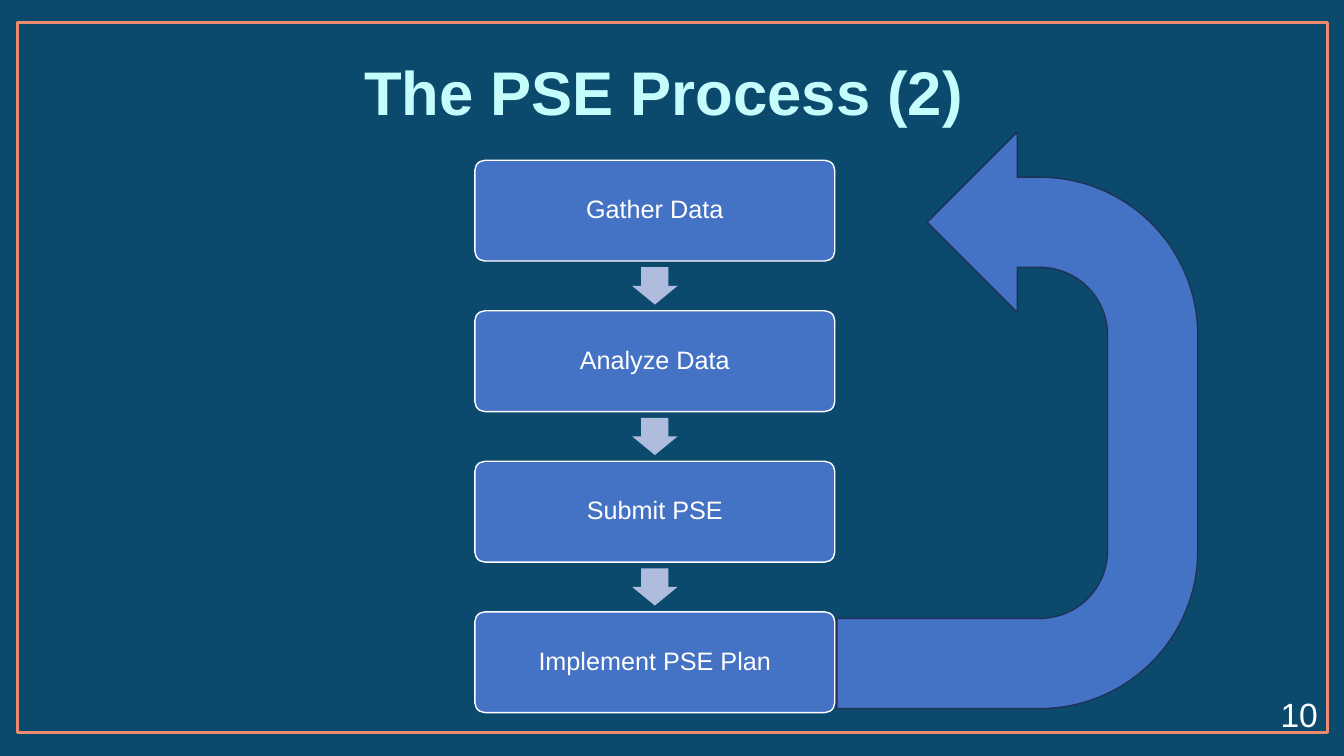
import pptx
import pptx.util
import pptx.dml.color
import pptx.enum.shapes
import pptx.enum.text

Inches, Pt = pptx.util.Inches, pptx.util.Pt
MSO_SHAPE = pptx.enum.shapes.MSO_SHAPE
PP_ALIGN = pptx.enum.text.PP_ALIGN

BLUE, WHITE = "4472C4", "FFFFFF"

prs = pptx.Presentation()
prs.slide_width, prs.slide_height = Inches(13.33), Inches(7.5)
slide = prs.slides.add_slide(prs.slide_layouts[6])


def add_shape(kind, left, top, width, height, fill=None, line=None, line_width=1):
    """Add a shadowless preset shape; no fill or line unless a colour is given."""
    shape = slide.shapes.add_shape(
        kind, Inches(left), Inches(top), Inches(width), Inches(height))
    shape.shadow.inherit = False
    for part, color in ((shape.fill, fill), (shape.line.fill, line)):
        if color:
            part.solid()
            part.fore_color.rgb = pptx.dml.color.RGBColor.from_string(color)
        else:
            part.background()
    if line:
        shape.line.width = Pt(line_width)
    return shape


def write(shape, text, size, color, align=PP_ALIGN.CENTER, bold=False):
    frame = shape.text_frame
    frame.word_wrap = True
    frame.vertical_anchor = pptx.enum.text.MSO_ANCHOR.MIDDLE
    paragraph = frame.paragraphs[0]
    paragraph.text = text
    paragraph.alignment = align
    font = paragraph.font
    font.name, font.size, font.bold = "Arial", Pt(size), bold
    font.color.rgb = pptx.dml.color.RGBColor.from_string(color)


background = slide.background.fill
background.solid()
background.fore_color.rgb = pptx.dml.color.RGBColor.from_string("0C4A6D")

add_shape(MSO_SHAPE.RECTANGLE, 0.17, 0.22, 13, 7.05, line="ED8B6F", line_width=2)

title = slide.shapes.add_textbox(Inches(0.17), Inches(0.22), Inches(12.83), Inches(1.45))
write(title, "The PSE Process (2)", 44, "C4FDFC", bold=True)
title.text_frame.paragraphs[0].line_spacing = 0.9

# Steps run down the slide with an arrow in each gap
steps = ["Gather Data", "Analyze Data", "Submit PSE", "Implement PSE Plan"]
step_left, step_top, step_width, step_height = 4.71, 1.59, 3.57, 1
step_pitch = (6.07 - step_top) / (len(steps) - 1)
arrow_width, arrow_height = 0.45, 0.37
arrow_left = step_left + (step_width - arrow_width) / 2
arrow_offset = (step_height + step_pitch - arrow_height) / 2

for index, step in enumerate(steps):
    top = step_top + index * step_pitch
    box = add_shape(MSO_SHAPE.ROUNDED_RECTANGLE, step_left, top,
                    step_width, step_height, BLUE, WHITE)
    box.adjustments[0] = 0.1
    write(box, step, 18, WHITE)
    box.text_frame.paragraphs[0].line_spacing = 0.9
    if index < len(steps) - 1:
        arrow = add_shape(MSO_SHAPE.DOWN_ARROW, arrow_left, top + arrow_offset,
                          arrow_width, arrow_height, "B0BCDE")
        arrow.adjustments[0] = 0.6

# Return arrow from the last step back to the first
return_arrow = add_shape(MSO_SHAPE.U_TURN_ARROW, 7.23, 2.38, 5.72, 3.58, BLUE, "1E3256")
return_arrow.rotation = 90
return_arrow._element.spPr.xfrm.set("flipH", "1")

slide_number = slide.shapes.add_textbox(Inches(10.17), Inches(6.88), Inches(3), Inches(0.4))
write(slide_number, "10", 24, WHITE, PP_ALIGN.RIGHT)

prs.save("out.pptx")
